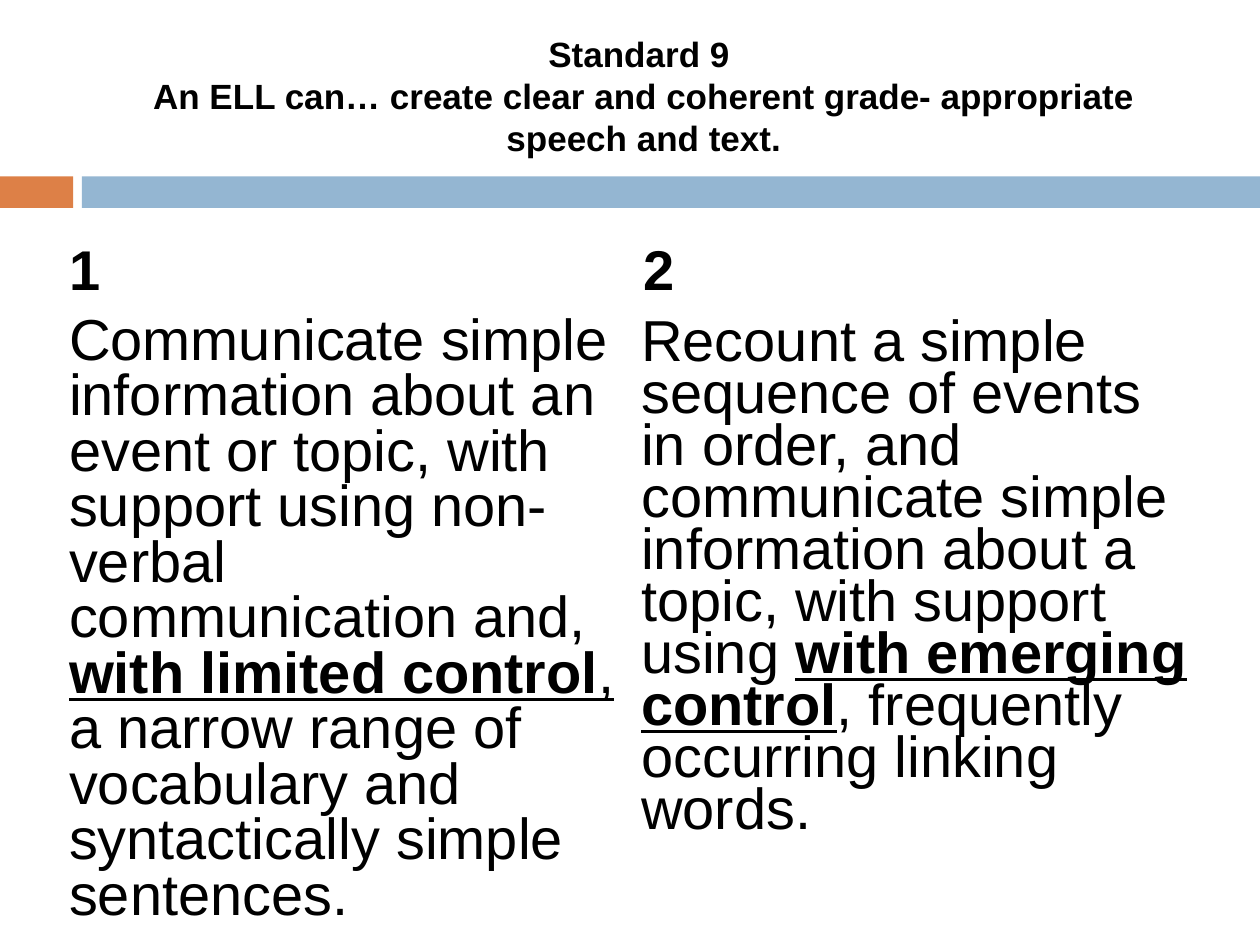
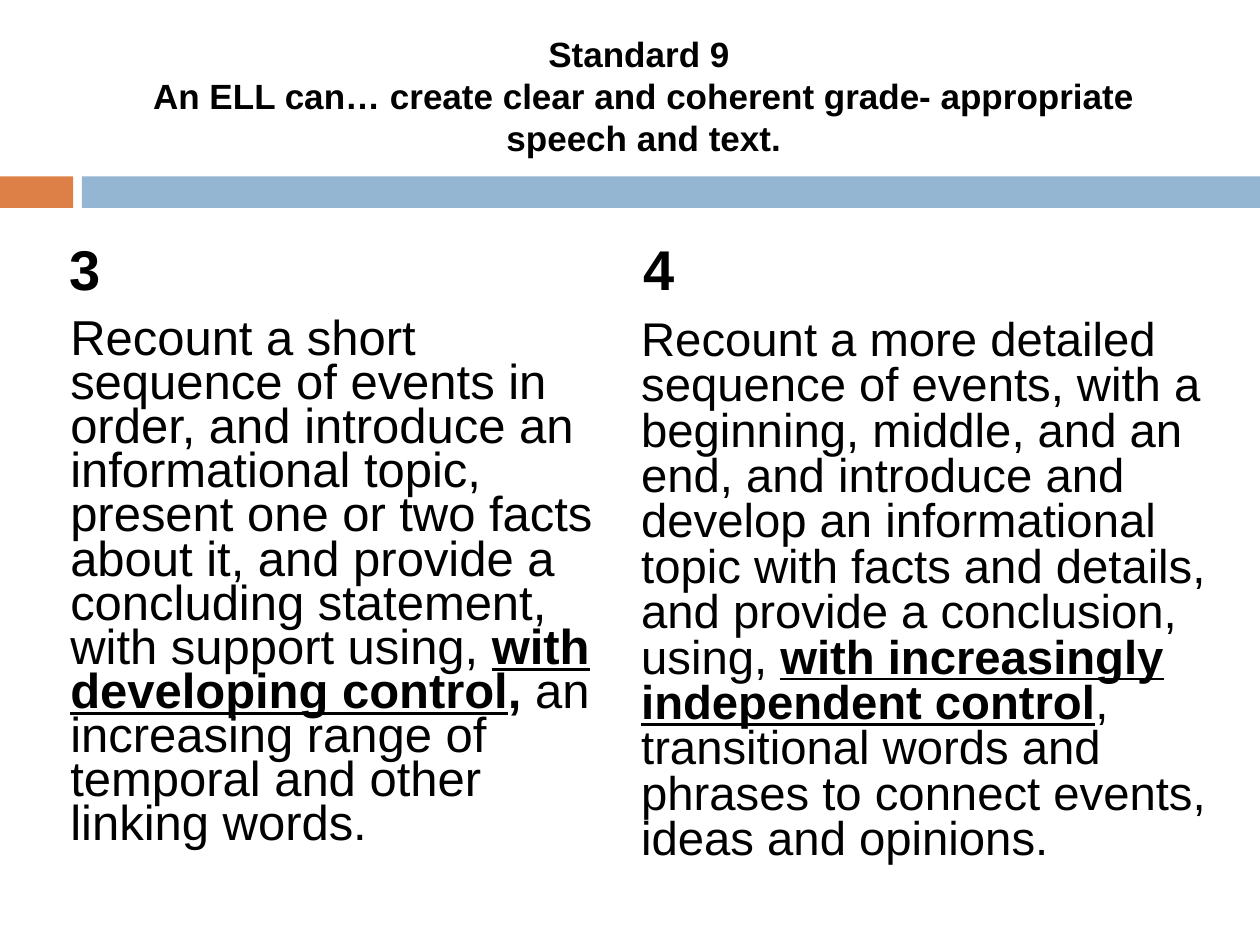
from pptx import Presentation
from pptx.dml.color import RGBColor
from pptx.enum.shapes import MSO_SHAPE as Shape
from pptx.enum.text import MSO_ANCHOR as Anchor, MSO_AUTO_SIZE as AutoSize, PP_ALIGN as Align
from pptx.util import Inches, Pt

FONT = "Arial"
BLACK, ORANGE, BLUE = "000000", "DD8047", "94B6D2"
TITLE = "Standard 9 \nAn ELL can… create clear and coherent grade- appropriate speech and text."
BANDS = [(0, 0.58, ORANGE), (0.65, 9.35, BLUE)]
COLUMN_WIDTH = 4.56
ROW_HEIGHTS = (0.65, 4.82)

LEVEL_PAGES = [
    (("1", "2"), [
        ((0.45, 2.46, 4.54, 5), 33, 0.8, [
            ("Communicate simple information about an event or topic, with support "
             "using non‐verbal communication and, ", ""),
            ("with limited control", "bu"),
            (", ", "u"),
            ("a narrow range of vocabulary and syntactically simple sentences.", ""),
        ]),
        ((4.99, 2.49, 4.58, 4.82), 33, 0.75, [
            ("Recount a simple sequence of events in order, and communicate simple "
             "information about a topic, with support using ", ""),
            ("with emerging control", "bu"),
            (", frequently occurring linking words.", ""),
        ]),
    ]),
    (("3", "4"), [
        ((0.46, 2.49, 4.46, 4.82), 28, 0.75, [
            ("Recount a short sequence of events in order, and introduce an informational "
             "topic, present one or two facts about it, and provide a concluding "
             "statement, with support using, ", ""),
            ("with developing control", "bu"),
            (", ", "b"),
            ("an increasing range of temporal and other linking words.", ""),
        ]),
        ((4.99, 2.49, 4.81, 4.82), 27, 0.8, [
            ("Recount a more detailed sequence of events, with a beginning, middle, and an "
             "end, and introduce and develop an informational topic with facts and "
             "details, and provide a conclusion, using, ", ""),
            ("with increasingly independent control", "bu"),
            (", transitional words and phrases to connect events, ideas and opinions.", ""),
        ]),
    ]),
]


def color(value):
    """Turn a hex string into a colour."""
    return RGBColor.from_string(value)


def style_font(font, size, bold=False, underline=False):
    """Apply the shared typeface and colour with the given emphasis."""
    font.name = FONT
    font.size = Pt(size)
    font.bold = bold
    font.underline = underline
    font.color.rgb = color(BLACK)


def set_title(page):
    """Place and format the title placeholder."""
    title = page.shapes.title
    title.left, title.top = Inches(0.65), Inches(0.25)
    title.width, title.height = Inches(8.92), Inches(1.01)
    frame = title.text_frame
    frame.text = TITLE
    frame.word_wrap = True
    frame.auto_size = AutoSize.NONE
    frame.vertical_anchor = Anchor.MIDDLE
    for para in frame.paragraphs:
        para.alignment = Align.CENTER
        for span in para.runs:
            style_font(span.font, 20, bold=True)


def add_bands(page):
    """Draw the two coloured bands below the title."""
    for left, width, fill in BANDS:
        band = page.shapes.add_shape(
            Shape.RECTANGLE, Inches(left), Inches(1.4), Inches(width), Inches(0.25))
        band.shadow.inherit = False
        band.fill.solid()
        band.fill.fore_color.rgb = color(fill)
        band.line.fill.background()


def add_level_table(page, levels):
    """Add the unfilled table headed by the level numbers."""
    table = page.shapes.add_table(
        len(ROW_HEIGHTS), len(levels), Inches(0.45), Inches(1.85),
        Inches(COLUMN_WIDTH * len(levels)), Inches(sum(ROW_HEIGHTS))).table
    table.first_row = table.horz_banding = False
    for row, height in zip(table.rows, ROW_HEIGHTS):
        row.height = Inches(height)
    for cell in table.iter_cells():
        cell.fill.background()
    for cell, level in zip(table.rows[0].cells, levels):
        cell.text_frame.text = level
        style_font(cell.text_frame.paragraphs[0].runs[0].font, 32, bold=True)


def add_description(page, place, size, spacing, spans):
    """Add a paragraph whose spans carry their own emphasis."""
    box = page.shapes.add_textbox(*map(Inches, place))
    box.text_frame.word_wrap = True
    para = box.text_frame.paragraphs[0]
    para.line_spacing = spacing
    for text, emphasis in spans:
        span = para.add_run()
        span.text = text
        style_font(span.font, size, "b" in emphasis, "u" in emphasis)


def main():
    """Build and save the deck."""
    deck = Presentation()
    deck.slide_width, deck.slide_height = Inches(10), Inches(7.5)
    for levels, descriptions in LEVEL_PAGES:
        page = deck.slides.add_slide(deck.slide_layouts[5])
        add_bands(page)
        set_title(page)
        add_level_table(page, levels)
        for description in descriptions:
            add_description(page, *description)
    deck.save("out.pptx")


if __name__ == "__main__":
    main()
